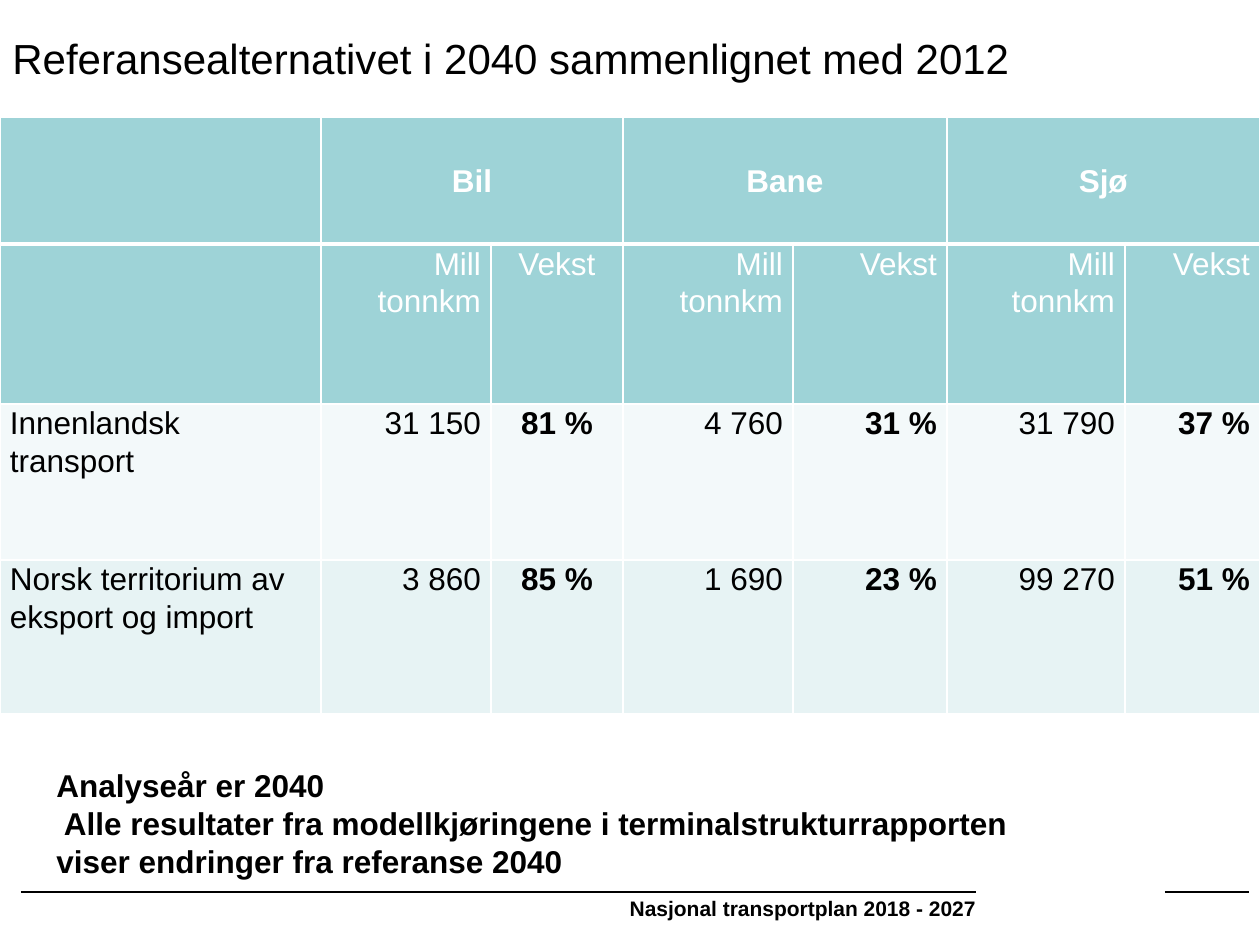
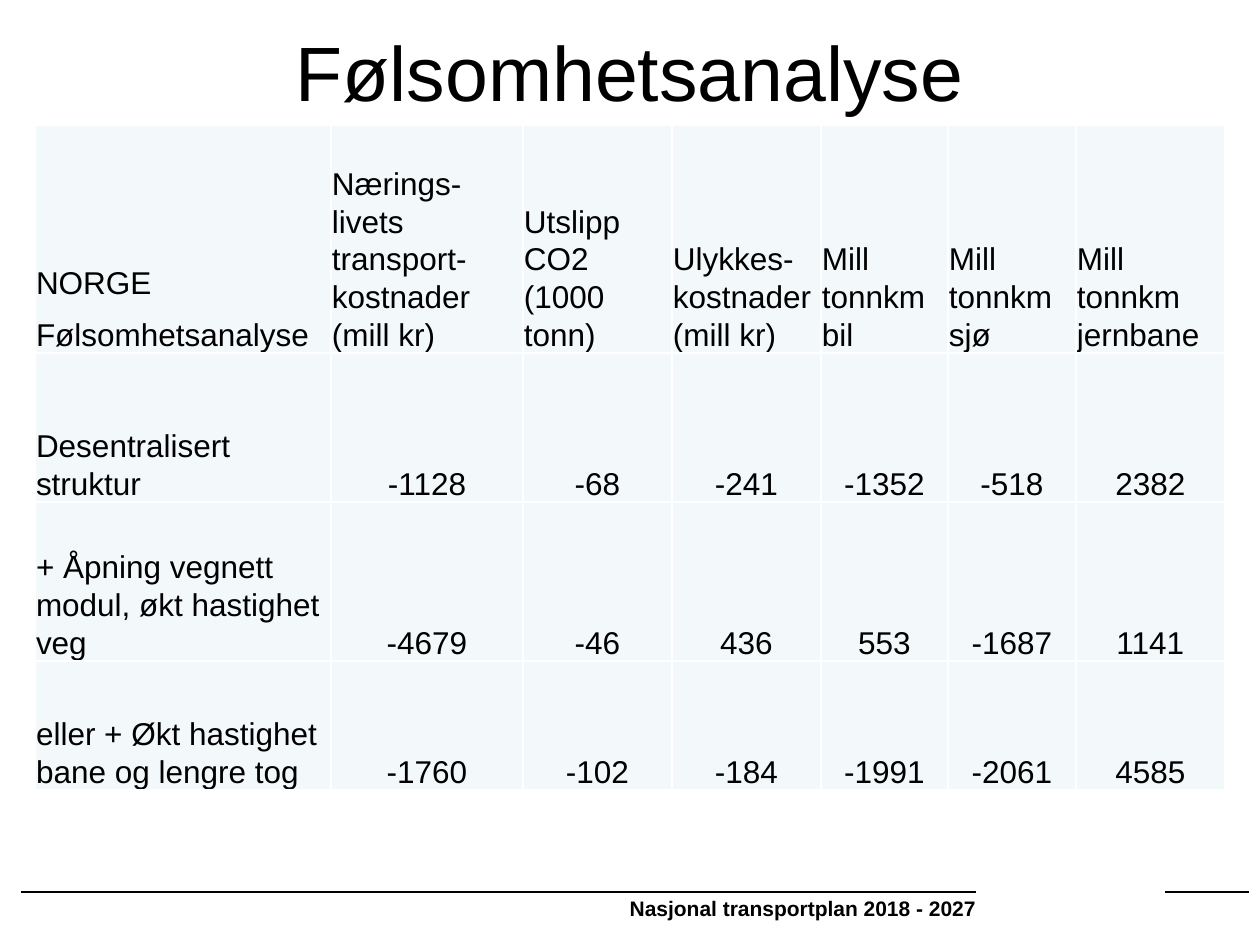
from lxml.etree import SubElement
from pptx import Presentation
from pptx.dml.color import RGBColor
from pptx.enum.shapes import MSO_CONNECTOR
from pptx.enum.text import MSO_ANCHOR, PP_ALIGN
from pptx.oxml import parse_xml
from pptx.oxml.ns import nsdecls, qn
from pptx.util import Emu, Pt

PX = 914400 / 126
BLACK = RGBColor(0x00, 0x00, 0x00)
WHITE = RGBColor(0xFF, 0xFF, 0xFF)
TEAL = RGBColor(0x9E, 0xD3, 0xD7)
PALE = RGBColor(0xF3, 0xF9, 0xFA)
LIGHT = RGBColor(0xE7, 0xF3, 0xF4)

LEFT, CENTER, RIGHT = PP_ALIGN.LEFT, PP_ALIGN.CENTER, PP_ALIGN.RIGHT
TOP, MIDDLE, BOTTOM = MSO_ANCHOR.TOP, MSO_ANCHOR.MIDDLE, MSO_ANCHOR.BOTTOM

# Tables
MODES = ["Bil", "Bane", "Sjø"]
GROWTH_COLS = [321, 170, 132, 170, 154, 178, 135]
GROWTH_ROWS = [127, 160, 156, 154]
GROWTH = [
    [""] + ["Mill tonnkm", "Vekst"] * len(MODES),
    ["Innenlandsk transport", "31 150", "81 %", "4 760", "31 %", "31 790", "37 %"],
    ["Norsk territorium av eksport og import",
     "3 860", "85 %", "1 690", "23 %", "99 270", "51 %"],
]
SENSITIVITY_COLS = [296, 192, 149, 149, 127, 128, 149]
SENSITIVITY_ROWS = [228, 149, 159, 129]
SENSITIVITY = [
    ["NORGE\nFølsomhetsanalyse", "Nærings-livets transport-kostnader (mill kr)",
     "Utslipp CO2 (1000 tonn)", "Ulykkes-kostnader (mill kr)",
     "Mill tonnkm bil", "Mill tonnkm sjø", "Mill tonnkm jernbane"],
    ["Desentralisert struktur", "-1128", "-68", "-241", "-1352", "-518", "2382"],
    ["+ Åpning vegnett modul, økt hastighet veg",
     "-4679", "-46", "436", "553", "-1687", "1141"],
    ["eller + Økt hastighet bane og lengre tog",
     "-1760", "-102", "-184", "-1991", "-2061", "4585"],
]


def px(n):
    return Emu(round(n * PX))


def set_all(obj, fmt):
    for name, value in fmt.items():
        setattr(obj, name, value)


def write(tf, text, size=18, color=BLACK, bold=False, **para):
    """Fill a text frame, one paragraph per line of text."""
    for i, line in enumerate(text.split("\n")):
        p = tf.paragraphs[0] if i == 0 else tf.add_paragraph()
        set_all(p, para)
        r = p.add_run()
        r.text = line
        set_all(r.font, {"name": "Arial", "size": Pt(size), "bold": bold})
        r.font.color.rgb = color


def add_text(s, box, text, anchor=TOP, **fmt):
    tf = s.shapes.add_textbox(*map(px, box)).text_frame
    set_all(tf, {"word_wrap": True, "vertical_anchor": anchor})
    write(tf, text, **fmt)


def add_rule(s, x1, x2, y):
    sp = s.shapes.add_connector(MSO_CONNECTOR.STRAIGHT, px(x1), px(y), px(x2), px(y))
    sp.line.width = Pt(1)
    sp.line.color.rgb = BLACK
    SubElement(sp._element.spPr, qn("a:effectLst"))


def add_footer(s, box):
    """Two rules along the top of the box, with the plan's name below."""
    x, y, w, h = box
    add_rule(s, x, x + 955, y)
    add_rule(s, x + w - 84, x + w, y)
    add_text(s, (x + 587, y, 390, h), "Nasjonal transportplan 2018 - 2027",
             anchor=MIDDLE, size=12, bold=True, alignment=CENTER)


def add_grid(s, box, cols, rows):
    tbl = s.shapes.add_table(len(rows), len(cols), *map(px, box)).table
    set_all(tbl, {"first_row": False, "horz_banding": False})
    for col, w in zip(tbl.columns, cols):
        col.width = px(w)
    for row, h in zip(tbl.rows, rows):
        row.height = px(h)
    return tbl


def style_cell(cell, fill, margins, anchor=TOP, **widths):
    """Fill, margins in px and white borders; widths override 1 pt per side."""
    cell.fill.solid()
    cell.fill.fore_color.rgb = fill
    names = ("margin_left", "margin_top", "margin_right", "margin_bottom")
    set_all(cell, dict(zip(names, map(px, margins)), vertical_anchor=anchor))
    tc_pr = cell._tc.get_or_add_tcPr()
    for i, side in enumerate("LRTB"):
        tc_pr.insert(i, parse_xml(
            f'<a:ln{side} {nsdecls("a")} w="{Pt(widths.get(side, 1))}"><a:solidFill>'
            f'<a:srgbClr val="{WHITE}"/></a:solidFill></a:ln{side}>'))


def add_growth_table(s, box):
    tbl = add_grid(s, box, GROWTH_COLS, GROWTH_ROWS)
    margins = (10, 0, 10, 0)

    # Mode headings, each over two columns
    for c in range(len(GROWTH_COLS)):
        style_cell(tbl.cell(0, c), TEAL, margins, MIDDLE, B=3)
    for i, mode in enumerate(MODES):
        cell = tbl.cell(0, 2 * i + 1)
        cell.merge(tbl.cell(0, 2 * i + 2))
        write(cell.text_frame, mode, color=WHITE, bold=True,
              alignment=CENTER, line_spacing=1.07)

    # Column headings and values
    aligns = [LEFT, RIGHT, CENTER] + [RIGHT] * 4
    looks = [(TEAL, WHITE, 3), (PALE, BLACK, 1), (LIGHT, BLACK, 1)]
    for r, (values, (fill, color, top)) in enumerate(zip(GROWTH, looks), 1):
        for c, value in enumerate(values):
            cell = tbl.cell(r, c)
            style_cell(cell, fill, margins, T=top)
            if value:
                write(cell.text_frame, value, color=color, bold=value.endswith("%"),
                      alignment=aligns[c], line_spacing=1.07)


def add_sensitivity_table(s, box):
    tbl = add_grid(s, box, SENSITIVITY_COLS, SENSITIVITY_ROWS)
    for r, values in enumerate(SENSITIVITY):
        for c, value in enumerate(values):
            cell = tbl.cell(r, c)
            style_cell(cell, PALE, (1, 1, 1, 0), BOTTOM)
            write(cell.text_frame, value, alignment=CENTER if r and c else LEFT,
                  line_spacing=1.07, space_after=Pt(8))


def add_slide(prs):
    s = prs.slides.add_slide(prs.slide_layouts[6])
    add_footer(s, (21, 892, 1228, 32))
    return s


def growth_slide(prs):
    s = add_slide(prs)
    add_growth_table(s, (0, 117, sum(GROWTH_COLS), sum(GROWTH_ROWS)))
    add_text(s, (0, 26, 1033, 63), "Referansealternativet i 2040 sammenlignet med 2012",
             anchor=MIDDLE, size=24)
    add_text(s, (44, 760, 1002, 127),
             "Analyseår er 2040\n Alle resultater fra modellkjøringene i "
             "terminalstrukturrapporten viser endringer fra referanse 2040", bold=True)


def sensitivity_slide(prs):
    s = add_slide(prs)
    add_text(s, (63, 27, 1134, 88), "Følsomhetsanalyse", anchor=MIDDLE,
             size=44, alignment=CENTER)
    add_sensitivity_table(s, (35, 125, sum(SENSITIVITY_COLS), sum(SENSITIVITY_ROWS)))


def main():
    prs = Presentation()
    set_all(prs, {"slide_width": px(1260), "slide_height": px(945)})
    growth_slide(prs)
    sensitivity_slide(prs)
    prs.save("out.pptx")


if __name__ == "__main__":
    main()
